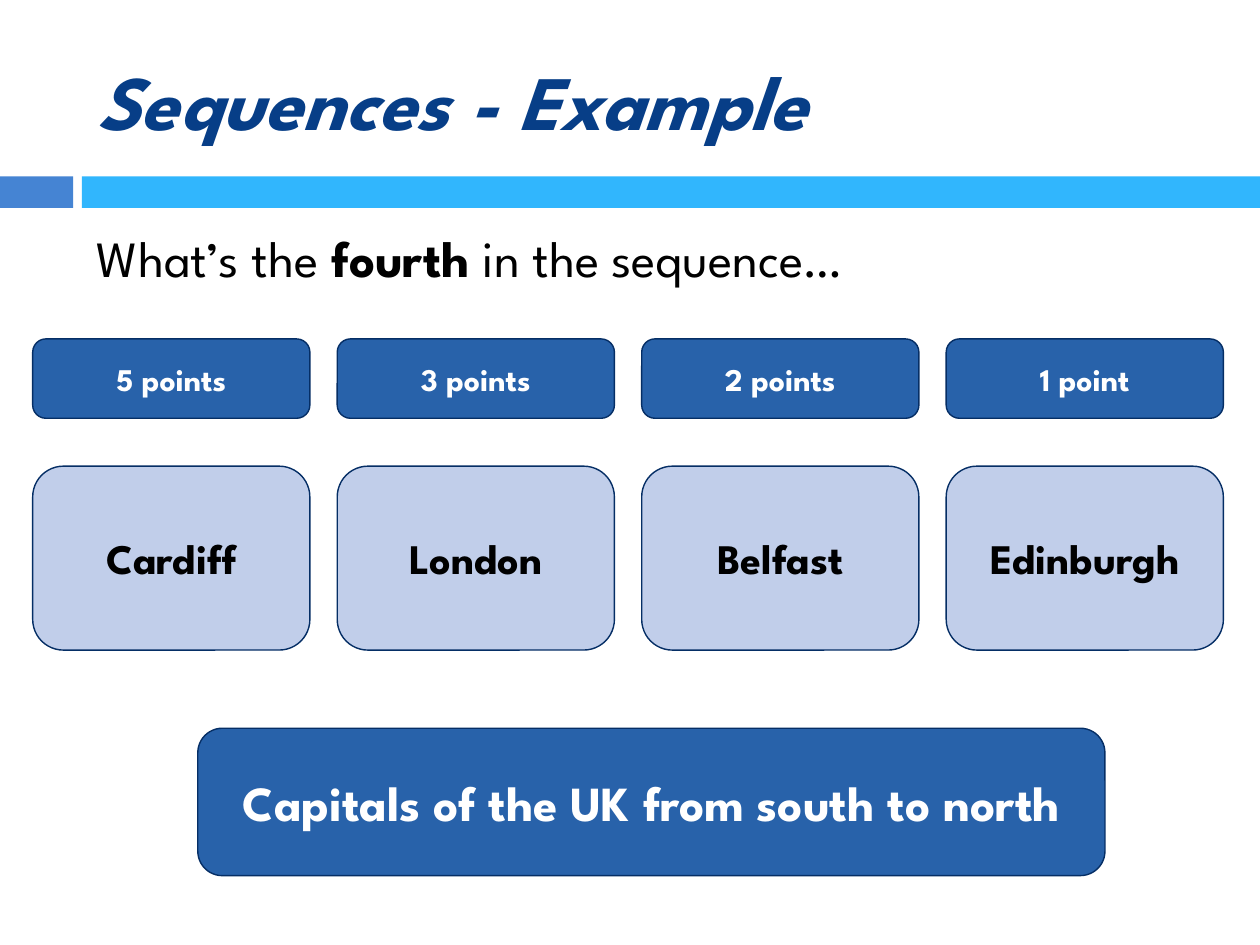
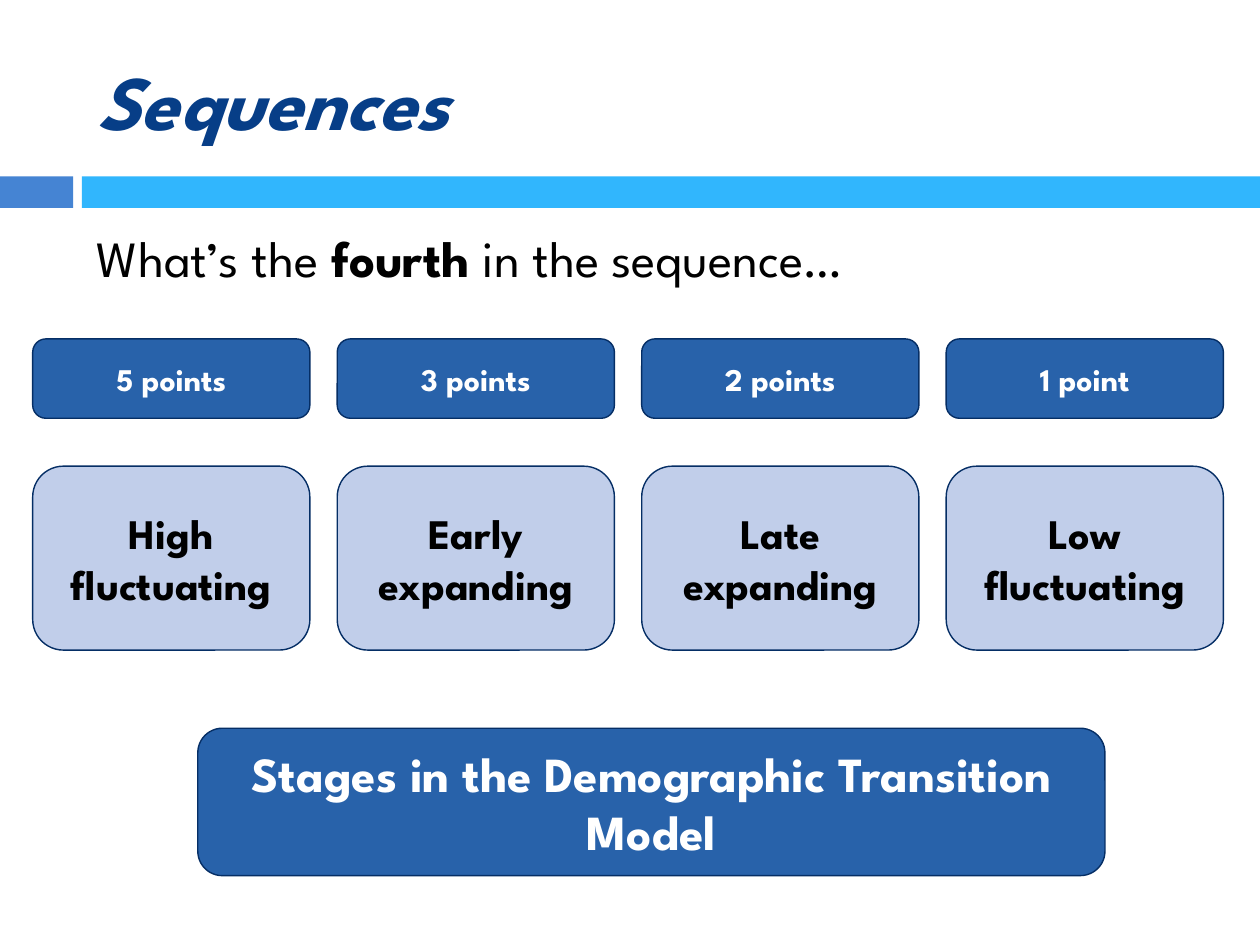
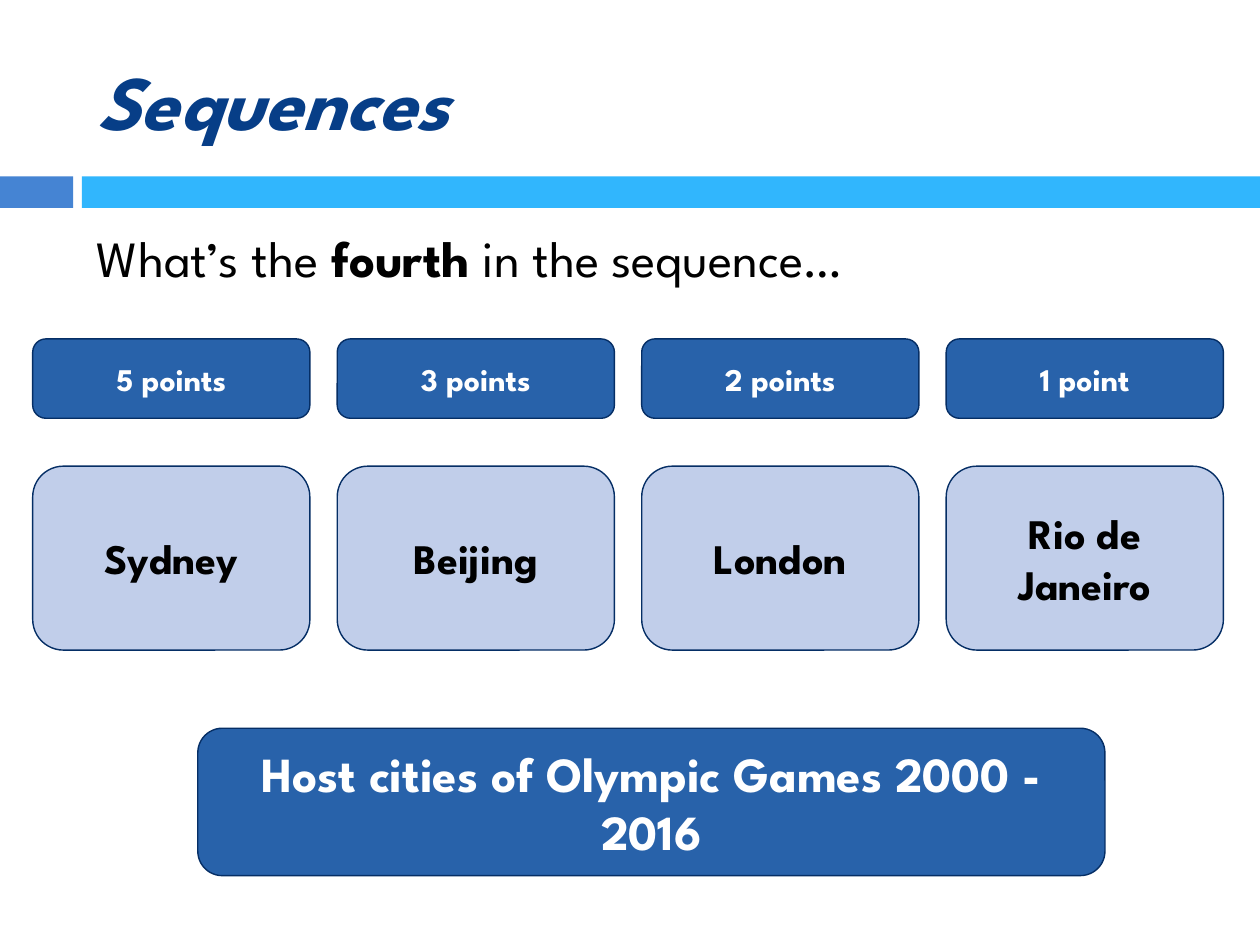
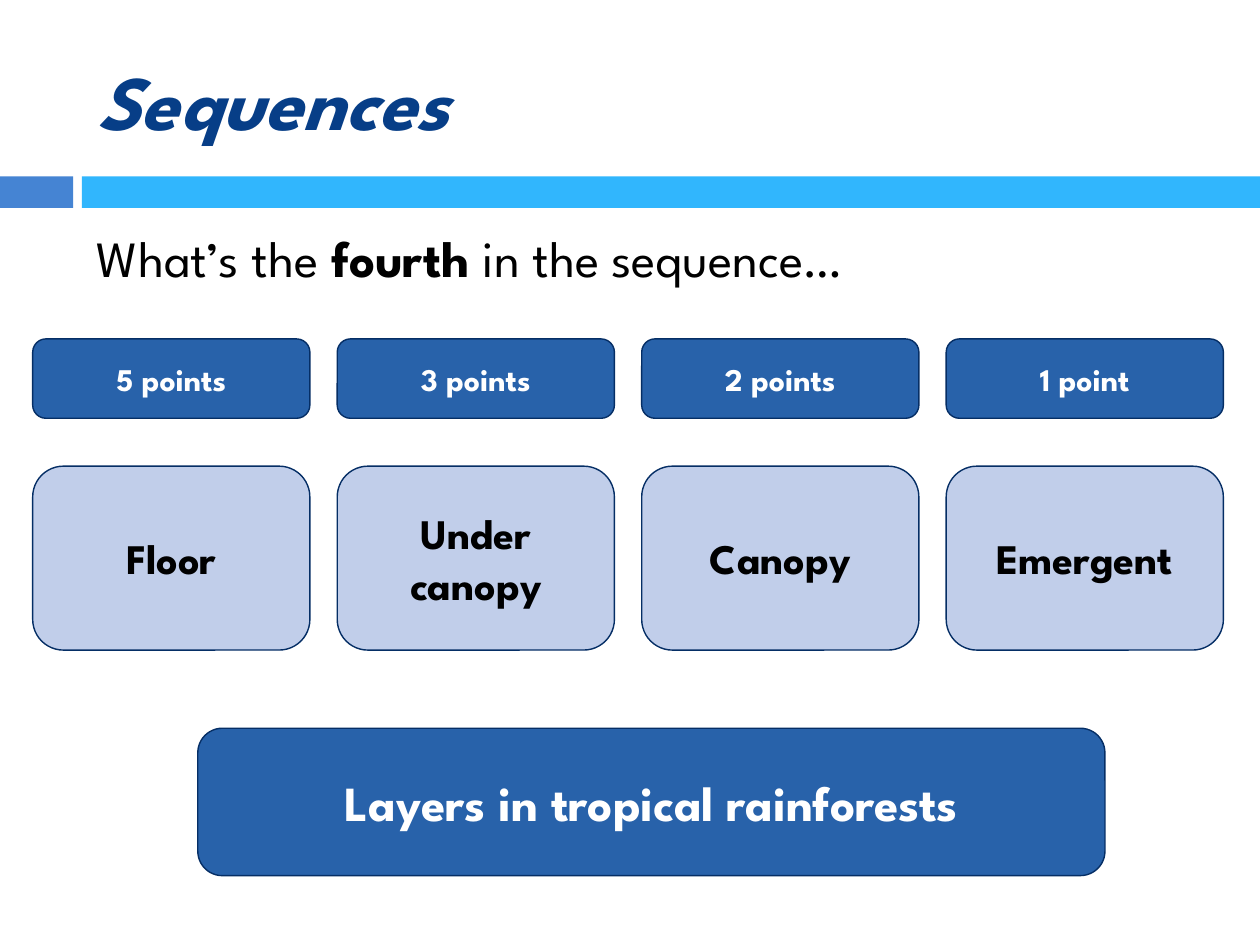
from dataclasses import dataclass

from pptx import Presentation
from pptx.dml.color import RGBColor
from pptx.enum.shapes import MSO_SHAPE
from pptx.enum.text import MSO_ANCHOR, MSO_AUTO_SIZE, PP_ALIGN
from pptx.util import Inches, Pt

RECTANGLE = MSO_SHAPE.RECTANGLE
ROUNDED = MSO_SHAPE.ROUNDED_RECTANGLE
LEFT, CENTER = PP_ALIGN.LEFT, PP_ALIGN.CENTER
TOP, MIDDLE = MSO_ANCHOR.TOP, MSO_ANCHOR.MIDDLE
NO_AUTOFIT = MSO_AUTO_SIZE.NONE

WIDTH, HEIGHT = Inches(10), Inches(7.5)
COLUMN, ROW = WIDTH / 100, HEIGHT / 75
TITLE_ONLY = 5
FONT = "League Spartan"
COLORS = {
    "title": "073E87",
    "band_accent": "4584D3",
    "band": "31B6FD",
    "strong": "2862AA",
    "pale": "C1CEEA",
    "outline": "052E65",
    "dark": "000000",
    "light": "FFFFFF",
}


@dataclass
class Box:
    left: float
    top: float
    width: float
    height: float

    def emu(self):
        return (round(self.left * COLUMN), round(self.top * ROW),
                round(self.width * COLUMN), round(self.height * ROW))

    def split(self, count, cell_width):
        step = (self.width - cell_width) / (count - 1)
        return [Box(self.left + i * step, self.top, cell_width, self.height)
                for i in range(count)]


TITLE_BOX = Box(6.7, 2.5, 89.2, 10.8)
BAND_BOX = Box(0, 14, 100, 2.5)
QUESTION_BOX = Box(6.7, 17.5, 89.2, 7.3)
POINTS_BOX = Box(2.6, 26.9, 94.5, 6.3)
CLUES_BOX = Box(2.6, 37, 94.5, 14.6)
ANSWER_BOX = Box(15.7, 57.8, 72, 11.7)
CARD_WIDTH = 22

QUESTION = [("What’s the ", False), ("fourth", True), (" in the sequence…", False)]
POINTS = ["5 points", "3 points", "2 points", "1 point"]
SEQUENCES = [
    ("Sequences - Example",
     ["Cardiff", "London", "Belfast", "Edinburgh"],
     "Capitals of the UK from south to north"),
    ("Sequences",
     ["High fluctuating", "Early expanding", "Late expanding", "Low fluctuating"],
     "Stages in the Demographic Transition Model"),
    ("Sequences",
     ["Sydney", "Beijing", "London", "Rio de Janeiro"],
     "Host cities of Olympic Games 2000 - 2016"),
    ("Sequences",
     ["Floor", "Under canopy", "Canopy", "Emergent"],
     "Layers in tropical rainforests"),
]


def rgb(name):
    return RGBColor.from_string(COLORS[name])


def style_text(frame, size, color, align=LEFT, anchor=MIDDLE):
    frame.word_wrap = True
    frame.auto_size = NO_AUTOFIT
    frame.vertical_anchor = anchor
    paragraph = frame.paragraphs[0]
    paragraph.alignment = align
    paragraph.font.name = FONT
    paragraph.font.size = Pt(size)
    paragraph.font.color.rgb = rgb(color)
    return paragraph


def add_block(slide, kind, box, fill):
    block = slide.shapes.add_shape(kind, *box.emu())
    block.shadow.inherit = False
    block.fill.solid()
    block.fill.fore_color.rgb = rgb(fill)
    block.line.fill.background()
    return block


def add_card(slide, box, text, size, fill, color):
    card = add_block(slide, ROUNDED, box, fill)
    card.line.color.rgb = rgb("outline")
    card.line.width = Pt(0.79)
    card.text_frame.text = text
    style_text(card.text_frame, size, color, CENTER).font.bold = True


def add_card_row(slide, box, texts, size, fill, color):
    for cell, text in zip(box.split(len(texts), CARD_WIDTH), texts):
        add_card(slide, cell, text, size, fill, color)


def add_band(slide, box):
    accent_width, band_start = 5.8, 6.5
    add_block(slide, RECTANGLE,
              Box(box.left, box.top, accent_width, box.height), "band_accent")
    add_block(slide, RECTANGLE,
              Box(box.left + band_start, box.top, box.width - band_start, box.height),
              "band")


def set_title(slide, box, text):
    title = slide.shapes.title
    title.left, title.top, title.width, title.height = box.emu()
    title.text_frame.text = text
    font = style_text(title.text_frame, 44, "title").font
    font.bold = font.italic = True


def add_question(slide, box):
    question = slide.shapes.add_textbox(*box.emu())
    paragraph = style_text(question.text_frame, 29, "dark", anchor=TOP)
    paragraph.space_before = Pt(7)
    for text, bold in QUESTION:
        run = paragraph.add_run()
        run.text = text
        run.font.bold = bold


def add_sequence_slide(deck, title, clues, answer):
    slide = deck.slides.add_slide(deck.slide_layouts[TITLE_ONLY])
    add_band(slide, BAND_BOX)
    set_title(slide, TITLE_BOX, title)
    add_question(slide, QUESTION_BOX)
    add_card_row(slide, POINTS_BOX, POINTS, 18, "strong", "light")
    add_card_row(slide, CLUES_BOX, clues, 24, "pale", "dark")
    add_card(slide, ANSWER_BOX, answer, 28, "strong", "light")


def main():
    deck = Presentation()
    deck.slide_width, deck.slide_height = WIDTH, HEIGHT
    for title, clues, answer in SEQUENCES:
        add_sequence_slide(deck, title, clues, answer)
    deck.save("out.pptx")


if __name__ == "__main__":
    main()
